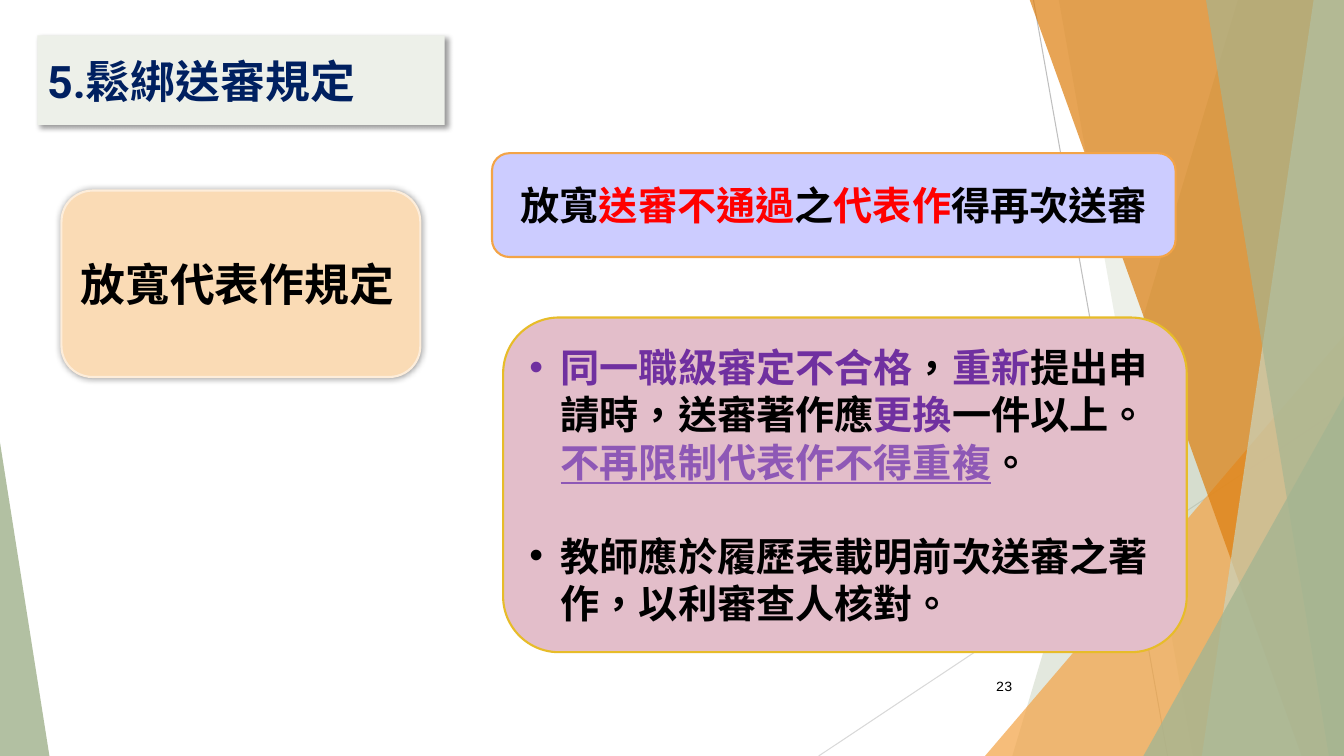
from lxml.etree import SubElement
from pptx import Presentation
from pptx.dml.color import RGBColor
from pptx.enum.lang import MSO_LANGUAGE_ID as Language
from pptx.enum.shapes import MSO_CONNECTOR as Connector, MSO_SHAPE as Shape
from pptx.enum.text import MSO_ANCHOR as Anchor, PP_ALIGN as Align
from pptx.oxml.ns import qn
from pptx.util import Inches, Pt

WIDTH, HEIGHT = 13.33, 7.5
BLACK = RGBColor(0x00, 0x00, 0x00)
RED = RGBColor(0xFF, 0x00, 0x00)
NAVY = RGBColor(0x00, 0x20, 0x60)
PURPLE = RGBColor(0x70, 0x30, 0xA0)
VIOLET = RGBColor(0x8E, 0x58, 0xB6)
SAGE = RGBColor(0xA5, 0xB5, 0x92)
PALE_SAGE = RGBColor(0xC9, 0xD3, 0xBE)
MIST = RGBColor(0xED, 0xF0, 0xE9)
ORANGE = RGBColor(0xF3, 0xA4, 0x47)
DARK_ORANGE = RGBColor(0xDD, 0x7E, 0x0E)
PEACH = RGBColor(0xFA, 0xDB, 0xB5)
CREAM = RGBColor(0xFD, 0xED, 0xDA)
LAVENDER = RGBColor(0xCC, 0xCC, 0xFF)
ROSE = RGBColor(0xE3, 0xBE, 0xCA)
GOLD = RGBColor(0xE7, 0xBC, 0x29)
GRAY = RGBColor(0xBF, 0xBF, 0xBF)
LIGHT_GRAY = RGBColor(0xD9, 0xD9, 0xD9)


class SlideBuilder:
    latin_font = "Roboto"
    asian_font = "Noto Sans CJK JP"

    def __init__(self, page):
        self.page = page
        self.shapes = page.shapes

    def line(self, start, end, color):
        points = [Inches(value) for value in (*start, *end)]
        line = self.shapes.add_connector(Connector.STRAIGHT, *points)
        line.line.color.rgb = color
        line.line.width = Pt(0.75)
        SubElement(line._element.spPr, qn("a:effectLst"))

    def paint(self, shape, color, opacity=100, outline=None):
        shape.shadow.inherit = False
        shape.fill.solid()
        shape.fill.fore_color.rgb = color
        if opacity < 100:
            tint = shape._element.spPr.find(qn("a:solidFill"))[0]
            SubElement(tint, qn("a:alpha"), val=str(opacity * 1000))
        if outline is None:
            shape.line.fill.background()
        else:
            shape.line.color.rgb = outline
            shape.line.width = Pt(1.5)

    def band(self, top_left, top_right, bottom_left, color, opacity):
        """Draw a full-height band that ends at the right edge of the slide."""
        builder = self.shapes.build_freeform(
            Inches(top_left), Inches(-0.01), scale=1.0)
        corners = [(top_right, -0.01), (WIDTH, HEIGHT), (bottom_left, HEIGHT)]
        builder.add_line_segments(
            [(Inches(x), Inches(y)) for x, y in corners], close=True)
        self.paint(builder.convert_to_shape(), color, opacity)

    def triangle(self, bounds, apex, color, opacity):
        shape = self.shapes.add_shape(
            Shape.ISOSCELES_TRIANGLE, *map(Inches, bounds))
        shape.adjustments[0] = apex
        self.paint(shape, color, opacity)

    def card(self, kind, bounds, fill, outline=None):
        card = self.shapes.add_shape(kind, *map(Inches, bounds))
        self.paint(card, fill, outline=outline)
        card.text_frame.word_wrap = True
        card.text_frame.vertical_anchor = Anchor.MIDDLE
        return card

    def shadow(self, card, blur, distance, angle):
        effects = card._element.spPr.find(qn("a:effectLst"))
        shade = SubElement(
            effects, qn("a:outerShdw"), blurRad=str(Pt(blur)),
            dist=str(Pt(distance)), dir=str(angle * 60000),
            algn="ctr", rotWithShape="0")
        color = SubElement(shade, qn("a:srgbClr"), val=str(BLACK))
        SubElement(color, qn("a:alpha"), val="40000")

    def add_spans(self, para, spans, size, align=Align.LEFT, latin=latin_font):
        """Fill a paragraph with bold (text, color) spans."""
        para.alignment = align
        for text, color in spans:
            span = para.add_run()
            span.text = text
            font = span.font
            font.size, font.bold, font.name = Pt(size), True, latin
            font.color.rgb = color
            font.language_id = Language.TRADITIONAL_CHINESE
            SubElement(span._r.get_or_add_rPr(), qn("a:ea"),
                       typeface=self.asian_font)

    def bullet(self, para):
        properties = para._p.get_or_add_pPr()
        properties.set("marL", str(Inches(0.31)))
        properties.set("indent", str(Inches(-0.31)))
        SubElement(properties, qn("a:buFont"), typeface="Arial")
        SubElement(properties, qn("a:buChar"), char="•")

    def page_number(self, number, bounds):
        box = self.shapes.add_textbox(*map(Inches, bounds))
        frame = box.text_frame
        frame.word_wrap = True
        frame.vertical_anchor = Anchor.MIDDLE
        frame.text = number
        para = frame.paragraphs[0]
        para.alignment = Align.RIGHT
        font = para.runs[0].font
        font.size, font.name = Pt(10), "Courier New"
        font.color.rgb = BLACK


def draw_backdrop(slide):
    slide.line((10.25, 0), (11.58, HEIGHT), GRAY)
    slide.line((WIDTH, 4.03), (8.12, HEIGHT), LIGHT_GRAY)
    slide.band(12.28, WIDTH, 10.04, SAGE, 30)
    slide.band(10.5, WIDTH, 11.83, SAGE, 20)
    slide.triangle((9.77, 3.33, 3.56, 4.17), 1, ORANGE, 72)
    slide.band(10.21, WIDTH, 12.91, DARK_ORANGE, 70)
    slide.band(13.03, WIDTH, 11.92, PALE_SAGE, 70)
    slide.band(11.96, WIDTH, 13.18, SAGE, 65)
    slide.triangle((11.34, 3.93, 1.99, 3.57), 1, SAGE, 80)
    slide.triangle((0, 4.39, 0.49, 3.11), 0, SAGE, 85)


def draw_content(slide):
    slide.page_number("23", (9.39, 6.61, 0.75, 0.4))

    title = slide.card(Shape.RECTANGLE, (0.37, 0.35, 4.04, 0.89), MIST)
    slide.shadow(title, 4, 3, 45)
    slide.add_spans(
        title.text_frame.paragraphs[0], [("5.鬆綁送審規定", NAVY)], 32)

    topic = slide.card(
        Shape.ROUNDED_RECTANGLE, (0.61, 1.89, 3.56, 1.85), PEACH, CREAM)
    slide.shadow(topic, 5, 0, 0)
    slide.add_spans(topic.text_frame.paragraphs[0],
                    [("放寬代表作規定", BLACK)], 32, latin=slide.asian_font)

    summary = slide.card(
        Shape.ROUNDED_RECTANGLE, (4.88, 1.52, 6.78, 1.03), LAVENDER, ORANGE)
    slide.add_spans(summary.text_frame.paragraphs[0], [
        ("放寬", BLACK), ("送審不通過", RED), ("之", BLACK),
        ("代表作", RED), ("得再次送審", BLACK)], 28, Align.CENTER)

    details = slide.card(
        Shape.ROUNDED_RECTANGLE, (4.99, 3.15, 6.78, 3.32), ROSE, GOLD)
    rule = details.text_frame.paragraphs[0]
    slide.add_spans(rule, [
        ("同一職級審定不合格", PURPLE), ("，", BLACK), ("重新", PURPLE),
        ("提出申請時，送審著作應", BLACK), ("更換", PURPLE),
        ("一件以上。", BLACK), ("不再限制代表作不得重複", VIOLET),
        ("。", BLACK)], 28)
    rule.runs[-2].font.underline = True
    duty = details.text_frame.add_paragraph()
    duty.space_before = Pt(33.6)
    slide.add_spans(duty, [
        ("教師應於履歷表載明前次送審之著作，以利審查人核對。", BLACK)], 28)
    for para in (rule, duty):
        slide.bullet(para)


def main():
    deck = Presentation()
    deck.slide_width, deck.slide_height = Inches(WIDTH), Inches(HEIGHT)
    slide = SlideBuilder(deck.slides.add_slide(deck.slide_layouts[6]))
    draw_backdrop(slide)
    draw_content(slide)
    deck.save("out.pptx")


if __name__ == "__main__":
    main()
